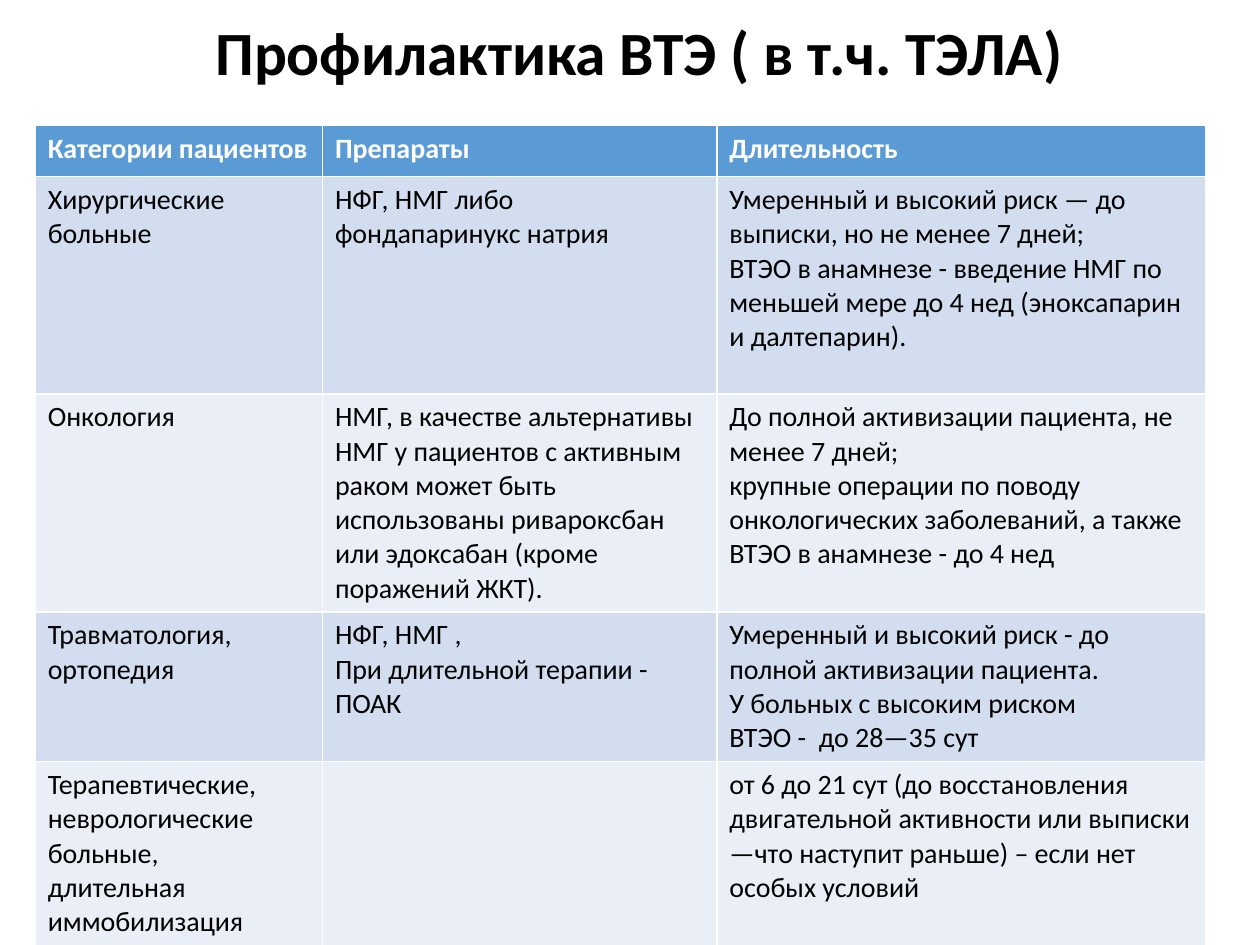
from pptx import Presentation
from pptx.dml.color import RGBColor
from pptx.enum.text import MSO_ANCHOR, MSO_AUTO_SIZE, PP_ALIGN
from pptx.util import Cm, Pt

TOP = MSO_ANCHOR.TOP
LEFT = PP_ALIGN.LEFT
FIXED = MSO_AUTO_SIZE.NONE

TITLE = {"name": "Calibri", "size": Pt(35.1), "bold": True}
HEAD = {"name": "Calibri", "size": Pt(16), "bold": True}
BODY = {"name": "Calibri", "size": Pt(16), "bold": False}

WIDTHS = [5.79, 7.95, 9.86]
HEIGHTS = [1.03, 4.38, 4.39, 3.02, 3.69]
ROWS = [
    ["Категории пациентов", "Препараты", "Длительность"],
    [
        "Хирургические больные",
        "НФГ, НМГ либо фондапаринукс натрия",
        "Умеренный и высокий риск — до выписки, но не менее 7 дней;\n"
        "ВТЭО в анамнезе - введение НМГ по меньшей мере до 4 нед "
        "(эноксапарин и далтепарин).",
    ],
    [
        "Онкология",
        "НМГ, в качестве альтернативы НМГ у пациентов с активным раком "
        "может быть использованы ривароксбан или эдоксабан "
        "(кроме поражений ЖКТ).",
        "До полной активизации пациента, не менее 7 дней;\n"
        "крупные операции по поводу онкологических заболеваний, "
        "а также ВТЭО в анамнезе - до 4 нед",
    ],
    [
        "Травматология, ортопедия",
        "НФГ, НМГ ,\nПри длительной терапии - ПОАК",
        "Умеренный и высокий риск - до полной активизации пациента.\n"
        "У больных с высоким риском\nВТЭО -  до 28—35 сут",
    ],
    [
        "Терапевтические, неврологические больные,\n"
        "длительная иммобилизация",
        "",
        "от 6 до 21 сут (до восстановления двигательной активности "
        "или выписки —что наступит раньше) – если нет особых условий",
    ],
]


def color(code):
    """Turn a hex string into a colour."""
    return RGBColor.from_string(code)


def apply(item, form):
    """Set each attribute of the item from a dict."""
    for key, value in form.items():
        setattr(item, key, value)


def write(frame, text, form, code):
    """Fill a text frame with paragraphs in one format."""
    frame.text = text
    for para in frame.paragraphs:
        for run in para.runs:
            apply(run.font, form)
            run.font.color.rgb = color(code)


def add_title(slide, text):
    """Place and format the title."""
    title = slide.shapes.title
    apply(title, {"left": Cm(4.09), "top": Cm(0.33),
                  "width": Cm(23.11), "height": Cm(2.26)})
    frame = title.text_frame
    apply(frame, {"vertical_anchor": TOP, "auto_size": FIXED,
                  "word_wrap": True})
    write(frame, text, TITLE, "000000")
    apply(frame.paragraphs[0], {"alignment": LEFT, "line_spacing": 0.9})


def add_grid(slide, rows):
    """Add the table with a header and banded rows."""
    grid = slide.shapes.add_table(
        len(rows), len(WIDTHS), Cm(0.71), Cm(2.53),
        Cm(sum(WIDTHS)), Cm(sum(HEIGHTS))).table
    for col, width in zip(grid.columns, WIDTHS):
        col.width = Cm(width)
    for i, texts in enumerate(rows):
        grid.rows[i].height = Cm(HEIGHTS[i])
        band = "D2DEEF" if i % 2 else "EAEFF7"
        fill, form, ink = (band, BODY, "000000") if i else (
            "5B9BD5", HEAD, "FFFFFF")
        for j, text in enumerate(texts):
            cell = grid.cell(i, j)
            cell.fill.solid()
            cell.fill.fore_color.rgb = color(fill)
            write(cell.text_frame, text, form, ink)


def main():
    """Build and save the slide."""
    deck = Presentation()
    apply(deck, {"slide_width": Cm(25.4), "slide_height": Cm(19.05)})
    slide = deck.slides.add_slide(deck.slide_layouts[5])
    add_grid(slide, ROWS)
    add_title(slide, "Профилактика ВТЭ ( в т.ч. ТЭЛА)")
    deck.save("out.pptx")


if __name__ == "__main__":
    main()
